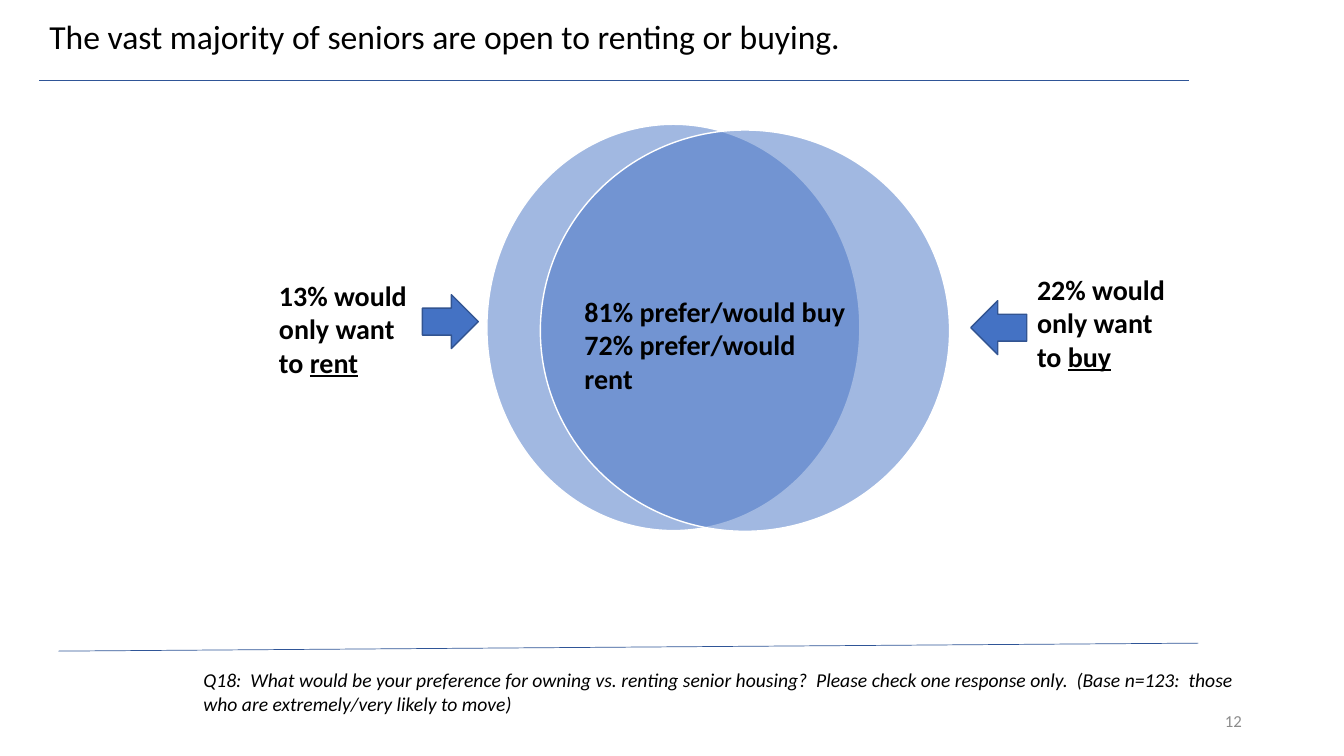
from lxml.etree import SubElement
from pptx import Presentation
from pptx.dml.color import RGBColor
from pptx.enum.shapes import MSO_CONNECTOR, MSO_SHAPE
from pptx.enum.text import MSO_ANCHOR as ANCHOR, PP_ALIGN as ALIGN
from pptx.oxml.ns import qn
from pptx.util import Pt

BLACK = RGBColor(0x00, 0x00, 0x00)
WHITE = RGBColor(0xFF, 0xFF, 0xFF)
GRAY = RGBColor(0x8C, 0x8C, 0x8C)
BLUE = RGBColor(0x44, 0x72, 0xC4)
ARROW_EDGE = RGBColor(0x32, 0x54, 0x91)
RULE_BLUE = RGBColor(0x2F, 0x55, 0x97)


def add_text(box, paragraphs, size, color=BLACK, bold=False, italic=False):
    """Add a wrapped text box; each paragraph is a (plain, underlined) pair."""
    tf = slide.shapes.add_textbox(*map(Pt, box)).text_frame
    tf.word_wrap = True
    for i, parts in enumerate(paragraphs):
        p = tf.add_paragraph() if i else tf.paragraphs[0]
        for text, underline in zip(parts, (None, True)):
            if text:
                r = p.add_run()
                r.text = text
                f = r.font
                f.name, f.size, f.color.rgb = "Calibri", Pt(size), color
                f.bold, f.italic, f.underline = bold, italic, underline
    return tf


def add_filled(kind, box, edge):
    sp = slide.shapes.add_shape(kind, *map(Pt, box))
    sp.shadow.inherit = False
    sp.fill.solid()
    sp.fill.fore_color.rgb = BLUE
    sp.line.color.rgb = edge
    sp.line.width = Pt(1)
    return sp


prs = Presentation()
prs.slide_width, prs.slide_height = Pt(960), Pt(540)
slide = prs.slides.add_slide(prs.slide_layouts[5])

# Title
title = slide.shapes.title
title.left, title.top, title.width, title.height = map(Pt, (28, -24.5, 828, 104.4))
tf = title.text_frame
tf.text = "The vast majority of seniors are open to renting or buying."
tf.vertical_anchor = ANCHOR.MIDDLE
p = tf.paragraphs[0]
p.alignment = ALIGN.LEFT
p.line_spacing = 0.9
f = p.runs[0].font
f.name, f.size, f.color.rgb = "Calibri", Pt(24), BLACK

# Overlapping circles: renters on the left, buyers on the right
for box in ((347.8, 88.8, 266.4, 290.2), (386, 92.9, 292.3, 286.6)):
    circle = add_filled(MSO_SHAPE.OVAL, box, WHITE)
    rgb = circle.fill._xPr.find(qn("a:solidFill"))[0]
    SubElement(rgb, qn("a:alpha"), val="50000")

# Labels
add_text((410.4, 206.6, 203, 80),
         [("81% prefer/would buy", ""), ("72% prefer/would rent", "")], 20, bold=True)
for x, y, share, choice in ((733.7, 190.8, 22, "buy"), (192.2, 195.1, 13, "rent")):
    add_text((x, y, 113, 80), [(f"{share}% would only want to ", choice)], 20, bold=True)

# Arrows pointing at the circles
for x, y, angle in ((301.7, 210.5, 0), (693.4, 214.8, 180)):
    arrow = add_filled(MSO_SHAPE.RIGHT_ARROW, (x, y, 40, 38.5), ARROW_EDGE)
    arrow.rotation = angle

# Survey question and slide number
question = ("Q18:  What would be your preference for owning vs. renting senior housing?  "
            "Please check one response only.  "
            "(Base n=123:  those who are extremely/very likely to move)")
tf = add_text((66.2, 473.8, 848, 41), [(question, "")], 14, italic=True)
tf.paragraphs[0]._p.get_or_add_pPr().set("marL", str(Pt(72)))

tf = add_text((678.2, 500.4, 216, 28.8), [("12", "")], 12, GRAY)
tf.vertical_anchor = ANCHOR.MIDDLE
tf.paragraphs[0].alignment = ALIGN.RIGHT

# Rules under the title and above the question
for ends in ((28, 57.6, 849.6, 57.6), (41.8, 465.1, 856, 459.4)):
    rule = slide.shapes.add_connector(MSO_CONNECTOR.STRAIGHT, *map(Pt, ends))
    rule.line.color.rgb = RULE_BLUE
    rule.line.width = Pt(0.5)
    SubElement(rule._element.spPr, qn("a:effectLst"))

prs.save("out.pptx")
